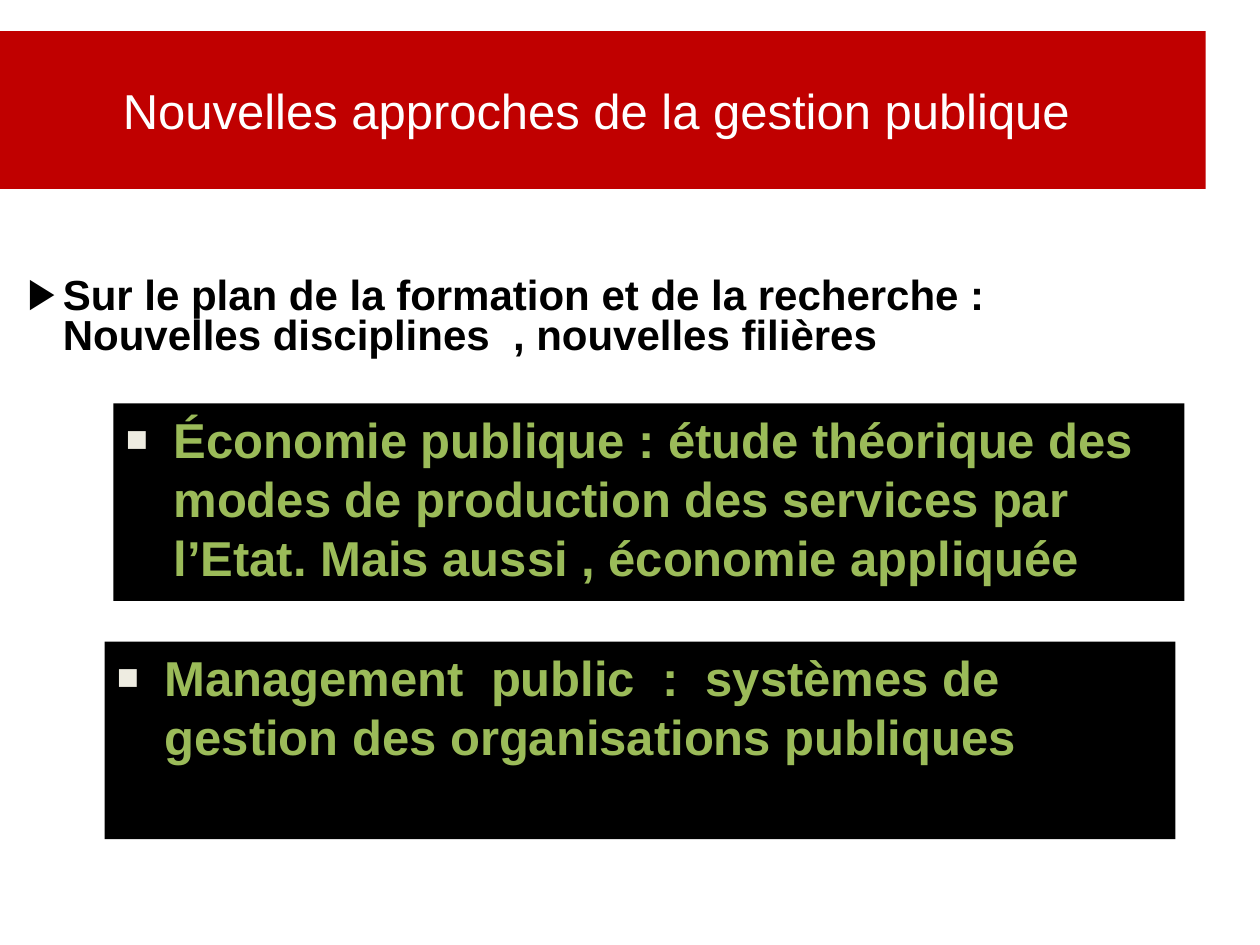
import pptx
import pptx.dml.color
import pptx.enum.shapes
import pptx.enum.text
import pptx.oxml.ns
import pptx.util
from lxml import etree

RGBColor = pptx.dml.color.RGBColor
RED = RGBColor(0xC0, 0x00, 0x00)
BLACK = RGBColor(0x00, 0x00, 0x00)
WHITE = RGBColor(0xFF, 0xFF, 0xFF)
GREEN = RGBColor(0x9B, 0xBB, 0x59)
CREAM = RGBColor(0xEE, 0xEC, 0xE1)

ALIGN = pptx.enum.text.PP_ALIGN
ANCHOR = pptx.enum.text.MSO_ANCHOR
Inches = pptx.util.Inches
FONT = "Arial"
WIDTH, HEIGHT = Inches(10), Inches(7.5)

# Boxes are left, top, width and height as shares of the slide.
TITLE_BOX = (0, 0.033, 0.957, 0.167)
INTRO_BOX = (0, 0.288, 0.808, 0.1)
PANELS = [
    ((0.09, 0.427, 0.85, 0.209),
     "Économie publique : étude théorique des modes de production "
     "des services par l’Etat. Mais aussi , économie appliquée"),
    ((0.083, 0.679, 0.85, 0.209),
     "Management  public  :  systèmes de gestion des organisations publiques"),
]


def to_slide(box):
    """Turn shares of the slide into lengths."""
    left, top, width, height = box
    return (round(left * WIDTH), round(top * HEIGHT),
            round(width * WIDTH), round(height * HEIGHT))


def add_band(page, box, color):
    band = page.shapes.add_shape(
        pptx.enum.shapes.MSO_SHAPE.RECTANGLE, *to_slide(box))
    band.shadow.inherit = False
    band.fill.solid()
    band.fill.fore_color.rgb = color
    band.line.fill.background()
    return band


def write(shape, text, size, color, bold=False, align=ALIGN.LEFT, anchor=ANCHOR.TOP):
    frame = shape.text_frame
    frame.word_wrap = True
    frame.vertical_anchor = anchor
    para = frame.paragraphs[0]
    para.text = text
    para.alignment = align
    para.font.name = FONT
    para.font.size = pptx.util.Pt(size)
    para.font.bold = bold
    para.font.color.rgb = color
    return para


def set_bullet(para, symbol, margin, hang, color, percent=100):
    properties = para._p.get_or_add_pPr()
    properties.set("marL", str(Inches(margin)))
    properties.set("indent", str(-Inches(hang)))
    qn = pptx.oxml.ns.qn
    bullet_color = etree.Element(qn("a:buClr"))
    etree.SubElement(bullet_color, qn("a:srgbClr"), val=str(color))
    parts = [
        bullet_color,
        etree.Element(qn("a:buSzPct"), val=str(percent * 1000)),
        etree.Element(qn("a:buFont"), typeface=FONT),
        etree.Element(qn("a:buChar"), char=symbol),
    ]
    for part in parts:
        properties.find(qn("a:defRPr")).addprevious(part)


def add_title(page, box):
    write(add_band(page, box, RED), "Nouvelles approches de la gestion publique ",
          28, WHITE, align=ALIGN.CENTER, anchor=ANCHOR.MIDDLE)


def add_intro(page, box):
    intro = page.shapes.add_textbox(*to_slide(box))
    para = write(intro, "Sur le plan de la formation et de la recherche : "
                 "Nouvelles disciplines  , nouvelles filières", 24, BLACK, bold=True)
    para.line_spacing = 0.8
    para.space_before = pptx.util.Pt(4.8)
    set_bullet(para, "▶", 0.4, 0.28, BLACK)


def add_panel(page, box, text):
    para = write(add_band(page, box, BLACK), text, 28, GREEN, bold=True)
    para.space_before = pptx.util.Pt(5.6)
    set_bullet(para, "■", 0.38, 0.38, CREAM, percent=75)


def main():
    deck = pptx.Presentation()
    deck.slide_width, deck.slide_height = WIDTH, HEIGHT
    page = deck.slides.add_slide(deck.slide_layouts[6])
    add_intro(page, INTRO_BOX)
    add_title(page, TITLE_BOX)
    for box, text in PANELS:
        add_panel(page, box, text)
    deck.save("out.pptx")


if __name__ == "__main__":
    main()
